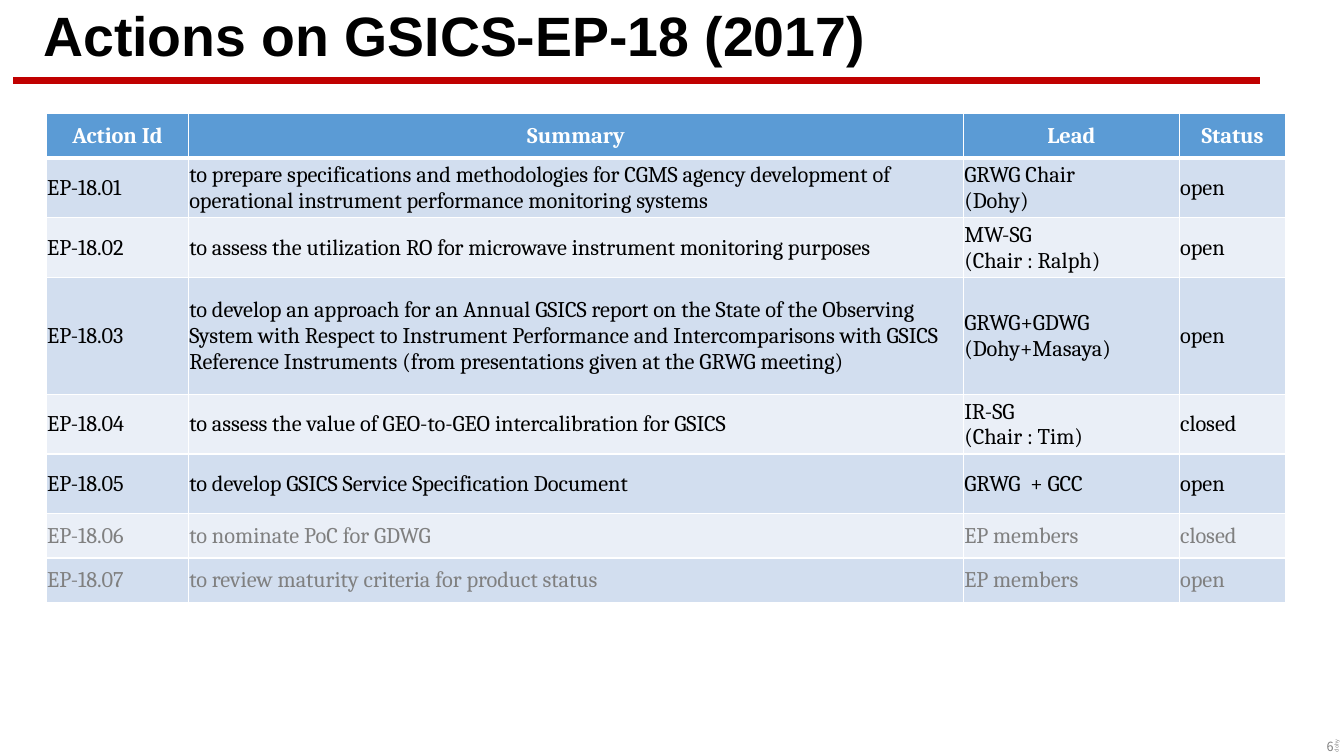
from lxml.etree import SubElement
from pptx import Presentation
from pptx.dml.color import RGBColor
from pptx.enum.shapes import MSO_CONNECTOR as Connector
from pptx.enum.text import MSO_ANCHOR as Anchor, PP_ALIGN as Align
from pptx.oxml.ns import qn
from pptx.util import Cm, Pt

BLACK, GREY, WHITE = "000000", "808080", "FFFFFF"
HEADER_FILL, BANDS = "5B9BD5", ("D2DEEF", "EAEFF7")
PAGE_FONT = "Noto Sans CJK KR"
COLUMN_WIDTHS = (3.58, 19.53, 5.44, 2.69)
HEADINGS = ("Action Id", "Summary", "Lead", "Status")
ACTIONS = (
    (1.5, BLACK, "to prepare specifications and methodologies for CGMS agency development of "
     "operational instrument performance monitoring systems", "GRWG Chair\n(Dohy)", "open"),
    (1.5, BLACK, "to assess the utilization RO for microwave instrument monitoring purposes",
     "MW-SG\v(Chair : Ralph)", "open"),
    (2.95, BLACK, "to develop an approach for an Annual GSICS report on the State of the Observing "
     "System with Respect to Instrument Performance and Intercomparisons with GSICS Reference "
     "Instruments (from presentations given at the GRWG meeting)",
     "GRWG+GDWG\v(Dohy+Masaya)", "open"),
    (1.5, BLACK, "to assess the value of GEO-to-GEO intercalibration for GSICS",
     "IR-SG\v(Chair : Tim)", "closed"),
    (1.5, BLACK, "to develop GSICS Service Specification Document", "GRWG  + GCC", "open"),
    (1.12, GREY, "to nominate PoC for GDWG", "EP members", "closed"),
    (1.12, GREY, "to review maturity criteria for product status", "EP members", "open"),
)


def paint(target, color):
    target.rgb = RGBColor.from_string(color)


def write(frame, text, size, font, color, bold=False, align=Align.LEFT, spacing=1.0):
    for number, paragraph_text in enumerate(text.split("\n")):
        para = frame.add_paragraph() if number else frame.paragraphs[0]
        para.alignment = align
        para.line_spacing = spacing
        for part, line in enumerate(paragraph_text.split("\v")):
            if part:
                para.add_line_break()
            span = para.add_run()
            span.text = line
            span.font.size = Pt(size)
            span.font.name = font
            span.font.bold = bold
            paint(span.font.color, color)


def add_text(page, place, text, size, font, color, rotation=0, anchor=Anchor.TOP, **style):
    box = page.shapes.add_textbox(*(Cm(length) for length in place))
    box.rotation = rotation
    box.text_frame.word_wrap = True
    box.text_frame.vertical_anchor = anchor
    write(box.text_frame, text, size, font, color, **style)


def add_rule(page, left, right, top, color, width):
    rule = page.shapes.add_connector(Connector.STRAIGHT, Cm(left), Cm(top), Cm(right), Cm(top))
    paint(rule.line.color, color)
    rule.line.width = Pt(width)
    SubElement(rule._element.spPr, qn("a:effectLst"))


def add_borders(cell, top, bottom):
    properties = cell._tc.get_or_add_tcPr()
    for side, width in (("L", 1), ("R", 1), ("T", top), ("B", bottom)):
        line = SubElement(properties, qn(f"a:ln{side}"), w=str(Pt(width)))
        fill = SubElement(line, qn("a:solidFill"))
        SubElement(fill, qn("a:srgbClr"), val=WHITE)


def fill_cell(cell, text, fill, color, top=1, bottom=1, **style):
    add_borders(cell, top, bottom)
    cell.fill.solid()
    paint(cell.fill.fore_color, fill)
    cell.vertical_anchor = Anchor.MIDDLE
    cell.margin_left = cell.margin_right = cell.margin_top = Cm(0.02)
    cell.margin_bottom = Cm(0)
    write(cell.text_frame, text, 16, "Cambria", color, **style)


def add_actions(page, left, top):
    heights = [1.12] + [action[0] for action in ACTIONS]
    frame = page.shapes.add_table(len(heights), len(HEADINGS), Cm(left), Cm(top),
                                  Cm(sum(COLUMN_WIDTHS)), Cm(sum(heights)))
    table = frame.table
    for column, width in zip(table.columns, COLUMN_WIDTHS):
        column.width = Cm(width)
    for row, height in zip(table.rows, heights):
        row.height = Cm(height)
    for column, heading in enumerate(HEADINGS):
        fill_cell(table.cell(0, column), heading, HEADER_FILL, WHITE,
                  bottom=3, bold=True, align=Align.CENTER)
    for number, (_, color, *details) in enumerate(ACTIONS, 1):
        for column, text in enumerate([f"EP-18.{number:02}", *details]):
            fill_cell(table.cell(number, column), text, BANDS[(number - 1) % 2], color,
                      top=3 if number == 1 else 1)


def main():
    deck = Presentation()
    deck.slide_width, deck.slide_height = Cm(33.87), Cm(19.05)
    page = deck.slides.add_slide(deck.slide_layouts[6])
    add_rule(page, 0.33, 31.75, 2.03, "C00000", 4.5)
    add_text(page, (30.96, 18.49, 2.9, 0.64), "6", 9, PAGE_FONT, GREY, align=Align.RIGHT)
    add_text(page, (32.23, 17.55, 2.9, 0.41), "dohy", 3.8, PAGE_FONT, GREY, rotation=270)
    add_text(page, (0.84, 0.2, 29.21, 1.52), "Actions on GSICS-EP-18 (2017)", 39.6, "Arial",
             BLACK, anchor=Anchor.MIDDLE, bold=True, spacing=0.9)
    add_actions(page, 1.17, 2.87)
    deck.save("out.pptx")


if __name__ == "__main__":
    main()
